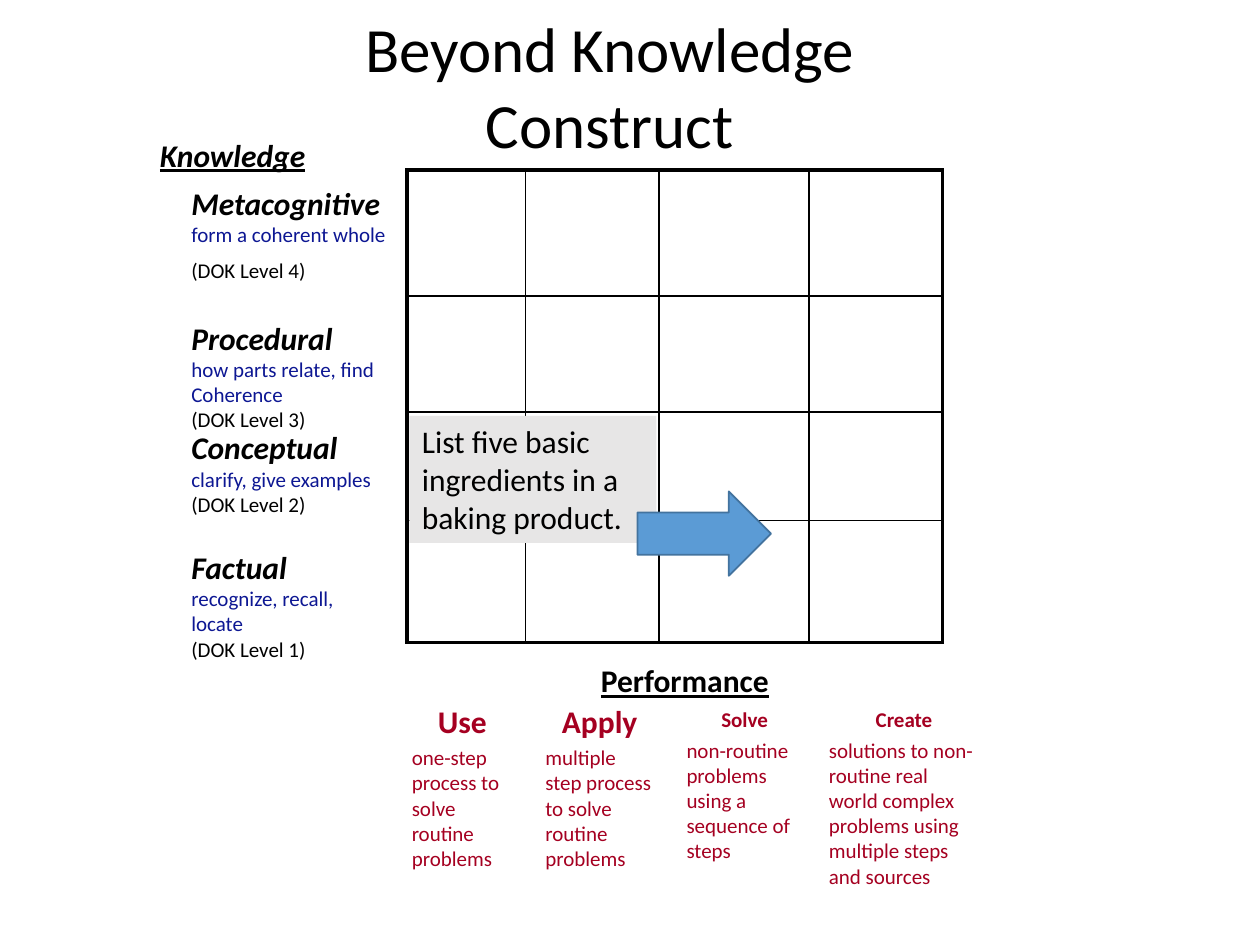
import pptx
import pptx.util
import pptx.dml.color
import pptx.enum.shapes
import pptx.enum.text
import pptx.oxml
from pptx.oxml.ns import nsdecls

Inches = pptx.util.Inches
Pt = pptx.util.Pt
SHAPE = pptx.enum.shapes.MSO_SHAPE
ALIGN = pptx.enum.text.PP_ALIGN
ANCHOR = pptx.enum.text.MSO_ANCHOR

HUES = {"ink": "000000", "blue": "0D1793", "red": "A50021",
        "note": "E7E6E6", "arrow": "5B9BD5", "edge": "43739E"}

COLS = [0.94, 1.06, 1.19, 1.06]
ROWS = [1, 0.92, 0.86, 0.97]

# top, width, name, hints, level, gap above the level in points
LEVELS = [
    (1.41, 1.81, "Metacognitive", ["form a coherent whole"], 4, 6),
    (2.48, 1.81, "Procedural", ["how parts relate, find", "Coherence"], 3, 0),
    (3.35, 1.81, "Conceptual", ["clarify, give examples"], 2, 0),
    (4.3, 1.75, "Factual", ["recognize, recall, locate"], 1, 0),
]

# left, top, width, height, name, name size, hint
TASKS = [
    (3.17, 5.52, 1, 1.46, "Use", 18,
     "one-step process to solve routine problems"),
    (4.23, 5.52, 1.06, 1.46, "Apply", 18,
     "multiple step process to solve routine problems"),
    (5.35, 5.56, 1.12, 1.36, "Solve", 12,
     "non-routine problems using a sequence of steps"),
    (6.48, 5.56, 1.39, 1.57, "Create", 12,
     "solutions to non-routine real world complex problems using "
     "multiple steps and sources"),
]


def color(key):
    return pptx.dml.color.RGBColor.from_string(HUES[key])


def style(para, size, hue="ink", bold=False, slant=False, under=False):
    for run in para.runs:
        font = run.font
        font.name = "Calibri"
        font.size = Pt(size)
        font.color.rgb = color(hue)
        font.bold, font.italic, font.underline = bold, slant, under


def add_text(slide, box, lines):
    """Add a wrapped text box and return its paragraphs."""
    frame = slide.shapes.add_textbox(*map(Inches, box)).text_frame
    frame.word_wrap = True
    frame.text = "\n".join(lines)
    return frame.paragraphs


def add_title(slide, box):
    title = slide.shapes.title
    title.left, title.top, title.width, title.height = map(Inches, box)
    frame = title.text_frame
    frame.text = "Beyond Knowledge Construct"
    frame.auto_size = pptx.enum.text.MSO_AUTO_SIZE.NONE
    frame.vertical_anchor = ANCHOR.MIDDLE
    frame.paragraphs[0].alignment = ALIGN.CENTER
    style(frame.paragraphs[0], 36)


def set_edge(cell, side, width):
    cell._tc.get_or_add_tcPr().append(pptx.oxml.parse_xml(
        f'<a:ln{side} {nsdecls("a")} w="{Pt(width)}"><a:solidFill>'
        f'<a:srgbClr val="{HUES["ink"]}"/></a:solidFill></a:ln{side}>'))


def add_grid(slide, left, top):
    """Draw the empty grid with a heavy outer frame."""
    size = map(Inches, (left, top, sum(COLS), sum(ROWS)))
    table = slide.shapes.add_table(len(ROWS), len(COLS), *size).table
    table.first_row = table.horz_banding = False
    for col, width in zip(table.columns, COLS):
        col.width = Inches(width)
    for row, height in zip(table.rows, ROWS):
        row.height = Inches(height)
    for r in range(len(ROWS)):
        for c in range(len(COLS)):
            cell = table.cell(r, c)
            outer = {"L": c == 0, "R": c == len(COLS) - 1,
                     "T": r == 0, "B": r == len(ROWS) - 1}
            for side, heavy in outer.items():
                set_edge(cell, side, 2.25 if heavy else 1)
            cell.fill.background()


def add_levels(slide, left):
    head = add_text(slide, (left, 1.03, 1.89, 0.4), ["Knowledge"])
    style(head[0], 18, bold=True, slant=True, under=True)
    for top, width, name, hints, level, gap in LEVELS:
        lines = [name, *hints, f"(DOK Level {level})"]
        box = (left + 0.25, top, width, 0.4 + 0.2 * (len(lines) - 1))
        first, *mid, last = add_text(slide, box, lines)
        style(first, 18, bold=True, slant=True)
        for para in mid:
            style(para, 12, "blue")
        style(last, 12)
        last.space_before = Pt(gap)


def add_tasks(slide):
    head = add_text(slide, (4.67, 5.2, 1.67, 0.4), ["Performance"])
    style(head[0], 18, bold=True, under=True)
    for *box, name, size, hint in TASKS:
        first, last = add_text(slide, box, [name, hint])
        first.alignment = ALIGN.CENTER
        style(first, size, "red", bold=True)
        last.space_before = Pt(3)
        style(last, 12, "red")


def add_shape(slide, kind, box, hue):
    shape = slide.shapes.add_shape(kind, *map(Inches, box))
    shape.shadow.inherit = False
    shape.fill.solid()
    shape.fill.fore_color.rgb = color(hue)
    return shape


def add_sample(slide, left, top):
    """Place the sample task and the arrow that moves it on."""
    note = add_shape(slide, SHAPE.RECTANGLE, (left, top, 1.96, 1.01), "note")
    note.line.fill.background()
    frame = note.text_frame
    frame.word_wrap = True
    frame.vertical_anchor = ANCHOR.TOP
    frame.text = "List five basic ingredients in a baking product."
    frame.paragraphs[0].alignment = ALIGN.LEFT
    style(frame.paragraphs[0], 18)
    arrow = add_shape(slide, SHAPE.RIGHT_ARROW,
                      (left + 1.81, top + 0.6, 1.06, 0.67), "arrow")
    arrow.line.color.rgb = color("edge")
    arrow.line.width = Pt(1)


def main():
    deck = pptx.Presentation()
    deck.slide_width, deck.slide_height = Inches(10), Inches(7.5)
    slide = deck.slides.add_slide(deck.slide_layouts.get_by_name("Title Only"))
    add_grid(slide, 3.23, 1.35)
    add_title(slide, (1.81, 0.02, 6.06, 1.31))
    add_levels(slide, 1.17)
    add_tasks(slide)
    add_sample(slide, 3.25, 3.3)
    deck.save("out.pptx")


if __name__ == "__main__":
    main()
